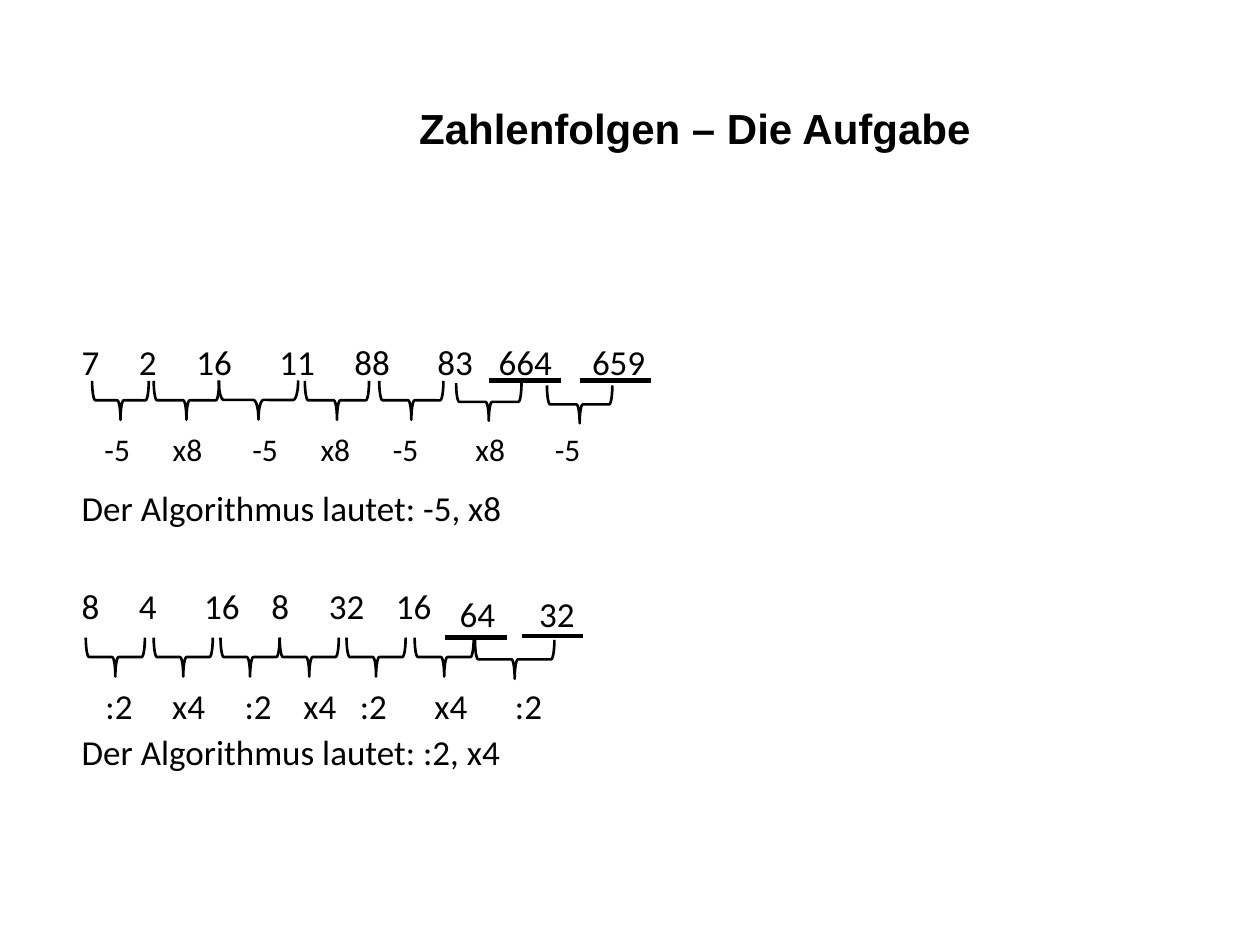
from lxml.etree import SubElement
from pptx import Presentation
from pptx.dml.color import RGBColor
from pptx.enum.shapes import MSO_CONNECTOR as CONN, MSO_SHAPE as SHAPE
from pptx.enum.text import MSO_ANCHOR as ANCHOR, MSO_AUTO_SIZE as AUTO, PP_ALIGN as ALIGN
from pptx.oxml.ns import qn
from pptx.util import Pt

BLACK = RGBColor(0, 0, 0)
BODY = {"name": "Calibri", "size": Pt(20), "bold": False}
SMALL = BODY | {"size": Pt(18)}
HEADING = {"name": "Arial", "size": Pt(24), "bold": True}


class SlideBuilder:
    def __init__(self, prs):
        self.s = prs.slides.add_slide(prs.slide_layouts[5])

    def place(self, sp, left, top, width, height):
        box = {"left": left, "top": top, "width": width, "height": height}
        for name, value in box.items():
            setattr(sp, name, Pt(value))

    def add_run(self, p, text, style):
        r = p.add_run()
        r.text = text
        for name, value in style.items():
            setattr(r.font, name, value)
        r.font.color.rgb = BLACK

    def title(self, text, *box):
        sp = self.s.shapes.title
        self.place(sp, *box)
        tf = sp.text_frame
        for name, value in {"auto_size": AUTO.NONE, "vertical_anchor": ANCHOR.TOP, "word_wrap": True}.items():
            setattr(tf, name, value)
        p = tf.paragraphs[0]
        p.alignment = ALIGN.CENTER
        self.add_run(p, text, HEADING)

    def text(self, paragraphs, left, top, width, height, style=BODY):
        tf = self.s.shapes.add_textbox(*map(Pt, (left, top, width, height))).text_frame
        tf.word_wrap = True
        for i, (items, stops, before) in enumerate(paragraphs):
            p = tf.add_paragraph() if i else tf.paragraphs[0]
            if stops:
                tabs = SubElement(p._p.get_or_add_pPr(), qn("a:tabLst"))
                for stop in stops:
                    SubElement(tabs, qn("a:tab"), pos=str(int(Pt(stop))), algn="l")
            p.space_before = Pt(before)
            self.add_run(p, "\t".join(items), style)

    def underline(self, left, top, width):
        ln = self.s.shapes.add_connector(CONN.STRAIGHT, Pt(left), Pt(top), Pt(left + width), Pt(top))
        ln.line.width = Pt(2.5)
        ln.line.color.rgb = BLACK
        SubElement(ln._element.spPr, qn("a:effectLst"))

    def brace(self, left, top, width, height=22.3, curve=0.0833):
        x = left + (width - height) / 2
        y = top + (height - width) / 2
        sp = self.s.shapes.add_shape(SHAPE.RIGHT_BRACE, Pt(x), Pt(y), Pt(height), Pt(width))
        sp.rotation = 90
        sp.adjustments[0] = curve
        sp.shadow.inherit = False
        sp.fill.background()
        sp.line.width = Pt(1.5)
        sp.line.color.rgb = BLACK


def main():
    prs = Presentation()
    prs.slide_width, prs.slide_height = Pt(720), Pt(540)
    b = SlideBuilder(prs)

    b.title("Zahlenfolgen – Die Aufgabe", 197.3, 54.7, 399.6, 36)
    b.text([
        (["7", "2", "16", "11", "88", "83"], [32.7, 65.5, 112.9, 155.8, 203.2], 0),
        (["Der Algorithmus lautet: -5, x8"], [], 59.7),
        (["8", "4", "16", "8", "32", "16"], [32.7, 70, 108.4, 141.2, 179.5], 31.7),
        (["Der Algorithmus lautet: :2, x4"], [], 59.7),
    ], 39.6, 190.8, 600, 340)

    b.text([(["-5", "x8"] * 3 + ["-5"], [39, 84.5, 123.5, 164.8, 212, 257.4], 0)],
           52.6, 241.9, 316, 29, SMALL)
    b.text([([":2", "x4"] * 3 + [":2"], [38.1, 79.5, 113.1, 145.4, 188, 234], 0)],
           53.2, 387.4, 316, 31.5)

    for answer, left, top in (("664", 277.9, 190.8), ("659", 331.2, 190.8),
                              ("64", 255.6, 334.8), ("32", 301, 334.8)):
        b.text([([answer], [], 0)], left, top, 60, 31.5)
    for line in ((279.4, 217.4, 41), (331.2, 217.4, 41),
                 (254.2, 364.3, 35.3), (298.1, 363.6, 35.3)):
        b.underline(*line)

    for left, width in ((52.6, 32.4), (87.8, 37.4), (174.2, 36.7), (216.7, 36.7)):
        b.brace(left, 217.6, width)
    b.brace(125, 217.4, 45.4, curve=0.127)
    b.brace(260.6, 218.9, 37.4, 21.6)
    b.brace(312.5, 220.3, 37.4, 21.6)

    for left in (49, 87.8, 126, 159.8, 198, 236.9):
        b.brace(left, 364.3, 33.8)
    b.brace(271.4, 365.6, 45.4)

    prs.save("out.pptx")


if __name__ == "__main__":
    main()
